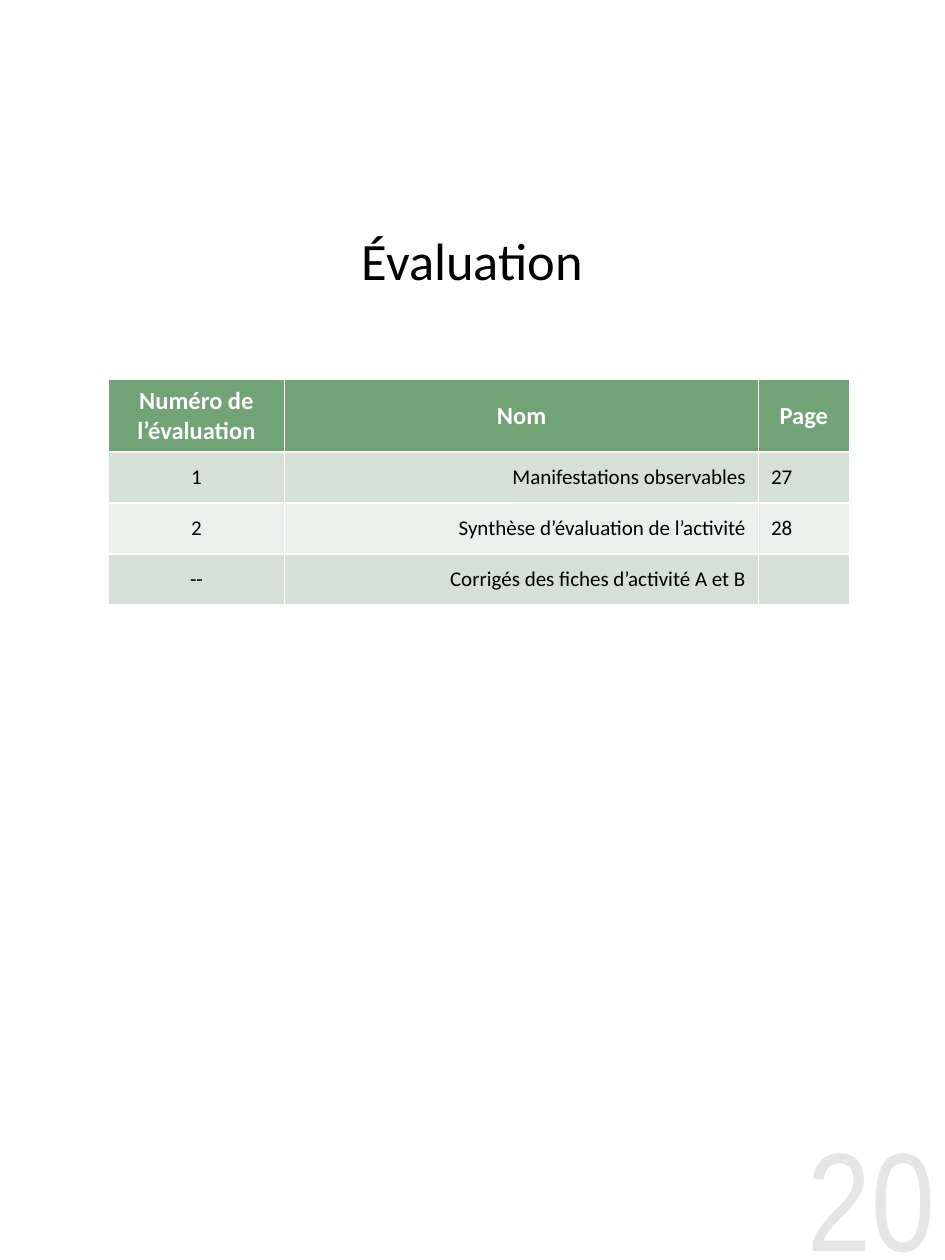
"""Build the evaluation contents page with its table and page number."""
from pptx import Presentation, util as u
from pptx.dml.color import RGBColor
from pptx.enum import text as t


def paint(fill, tint):
    fill.solid()
    fill.fore_color.rgb = RGBColor.from_string(tint)


def style(frame, align, tint, **form):
    for para in frame.paragraphs:
        para.alignment = align
        for key, val in form.items():
            setattr(para.font, key, val)
        para.font.color.rgb = RGBColor.from_string(tint)


mid, left, right = t.PP_ALIGN.CENTER, t.PP_ALIGN.LEFT, t.PP_ALIGN.RIGHT
deck = Presentation()
deck.slide_width, deck.slide_height = u.Cm(19.05), u.Cm(25.4)
page = deck.slides.add_slide(deck.slide_layouts[5])

title = page.shapes.title
spot = {"left": 6.91, "top": 4.37, "width": 5.23, "height": 1.73}
for key, val in spot.items():
    setattr(title, key, u.Cm(val))
paint(title.fill, "FFFFFF")
frame = title.text_frame
frame.text = "Évaluation"
frame.vertical_anchor = t.MSO_ANCHOR.MIDDLE
frame.word_wrap = False
style(frame, mid, "000000", name="Calibri", size=u.Pt(30))

rows = [
    ("Numéro de\nl’évaluation", "Nom", "Page"),
    ("1", "Manifestations observables", "27"),
    ("2", "Synthèse d’évaluation de l’activité", "28"),
    ("--", "Corrigés des fiches d’activité A et B", ""),
]
wide = [3.56, 9.55, 1.83]
high = [1.46, 1.03, 1.03, 1.03]
tints = ["72A376", "D5E0D6", "EBF0EC", "D5E0D6"]
grid = page.shapes.add_table(
    len(rows), len(wide), u.Cm(2.18), u.Cm(7.65), u.Cm(sum(wide)), u.Cm(sum(high))
).table
for col, size in zip(grid.columns, wide):
    col.width = u.Cm(size)
for r, row in enumerate(rows):
    grid.rows[r].height = u.Cm(high[r])
    head = r == 0
    for c, word in enumerate(row):
        cell = grid.cell(r, c)
        cell.text = word
        cell.vertical_anchor = t.MSO_ANCHOR.MIDDLE
        paint(cell.fill, tints[r])
        align = mid if head else (mid, right, left)[c]
        style(cell.text_frame, align, "FFFFFF" if head else "000000",
              name="Calibri", size=u.Pt(14 if head else 12), bold=head)

box = page.shapes.add_textbox(u.Cm(14.8), u.Cm(22.4), u.Cm(4.05), u.Cm(3))
frame = box.text_frame
frame.text = "20"
frame.word_wrap = True
for side in ("left", "top", "right", "bottom"):
    setattr(frame, "margin_" + side, 0)
style(frame, right, "E5E5E5", name="Arial Narrow", size=u.Pt(80))

deck.save("out.pptx")
